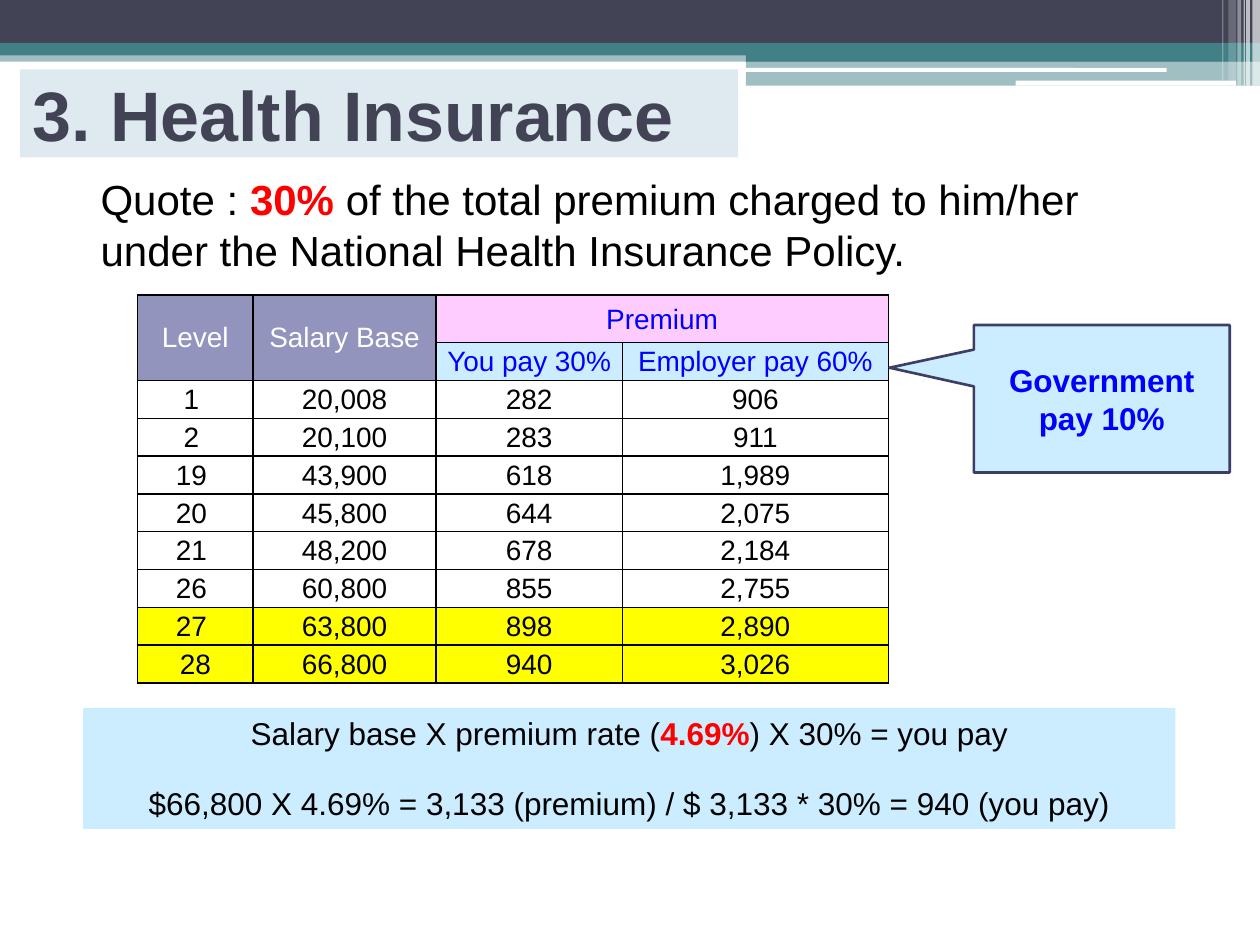
import pptx
import pptx.dml.color
import pptx.enum.shapes
import pptx.enum.text
import pptx.oxml
import pptx.oxml.ns
import pptx.util
from lxml import etree

COLORS = {
    "navy": "424456", "teal": "438086", "white": "FFFFFF", "black": "000000",
    "mist": "DEE9F0", "sky": "CCECFF", "violet": "9394BE", "pink": "FFCCFF",
    "yellow": "FFFF00", "red": "FF0000", "blue": "0000FF", "edge": "3D3E66",
}
SHAPE = pptx.enum.shapes.MSO_SHAPE
ALIGN = pptx.enum.text.PP_ALIGN
MIDDLE = pptx.enum.text.MSO_ANCHOR.MIDDLE
TOP = pptx.enum.text.MSO_ANCHOR.TOP
rgb = pptx.dml.color.RGBColor.from_string

prs = pptx.Presentation()
prs.slide_width = pptx.util.Inches(10)
prs.slide_height = pptx.util.Inches(7.5)
s = prs.slides.add_slide(prs.slide_layouts[6])

# Layout grid: 10 columns by 7.5 rows
COL = prs.slide_width / 10
ROW = prs.slide_height / 7.5


def add_box(x, y, w, h, color, alpha=100, kind=SHAPE.RECTANGLE):
    sp = s.shapes.add_shape(kind, int(x * COL), int(y * ROW), int(w * COL), int(h * ROW))
    sp.shadow.inherit = False
    sp.line.fill.background()
    sp.fill.solid()
    sp.fill.fore_color.rgb = rgb(COLORS[color])
    if alpha < 100:
        clr = sp.fill._xPr.find(".//" + pptx.oxml.ns.qn("a:srgbClr"))
        etree.SubElement(clr, pptx.oxml.ns.qn("a:alpha"), val=str(alpha * 1000))
    return sp


def write(tf, paragraphs, size, align=ALIGN.CENTER, anchor=MIDDLE):
    """Each paragraph is a list of (text, color, bold) runs."""
    tf.word_wrap = True
    tf.vertical_anchor = anchor
    for i, runs in enumerate(paragraphs):
        p = tf.add_paragraph() if i else tf.paragraphs[0]
        p.alignment = align
        for text, color, bold in runs:
            r = p.add_run()
            r.text = text
            r.font.name = "Arial"
            r.font.size = pptx.util.Pt(size)
            r.font.bold = bold
            r.font.color.rgb = rgb(COLORS[color])


# Header bands
for x, y, w, h, color, alpha in [
    (0, 0.4, 10, 0.09, "teal", 50),
    (0, 0, 10, 0.34, "navy", 100),
    (0, 0.34, 10, 0.1, "teal", 100),
    (5.92, 0.39, 4.08, 0.1, "teal", 100),
    (5.92, 0.48, 4.08, 0.2, "teal", 50),
]:
    add_box(x, y, w, h, color, alpha)

# White streaks under the header
for x, y, w, h in [(5.91, 0.54, 3.35, 0.03), (8.06, 0.64, 1.75, 0.04)]:
    add_box(x, y, w, h, "white", kind=SHAPE.ROUNDED_RECTANGLE)

# Translucent stripes at the right edge
for x, w, h, alpha in [
    (9.94, 0.06, 0.68, 65), (9.89, 0.03, 0.68, 65), (9.87, 0.01, 0.68, 60),
    (9.82, 0.03, 0.68, 40), (9.75, 0.06, 0.64, 20), (9.7, 0.01, 0.64, 30),
]:
    add_box(x, 0, w, h, "white", alpha)

# Title
sp = add_box(0.16, 0.55, 5.7, 0.7, "mist")
write(sp.text_frame, [[("3. Health Insurance", "navy", True)]], 40, ALIGN.LEFT)

# Quote
sp = s.shapes.add_textbox(int(0.7 * COL), int(1.33 * ROW), int(8.59 * COL), int(0.91 * ROW))
write(sp.text_frame, [[
    ("Quote : ", "black", False),
    ("30% ", "red", True),
    ("of the total premium charged to him/her under the National Health Insurance Policy.",
     "black", False),
]], 24, ALIGN.LEFT, TOP)

# Premium table
rows = [
    ("Level", "Salary Base", "Premium", ""),
    ("", "", "You pay 30%", "Employer pay 60%"),
    ("1 ", "20,008", "282", "906"),
    ("2 ", "20,100", "283", "911"),
    ("19 ", "43,900", "618", "1,989"),
    ("20 ", "45,800", "644", "2,075"),
    ("21 ", "48,200", "678", "2,184"),
    ("26 ", "60,800", "855", "2,755"),
    ("27 ", "63,800", "898", "2,890"),
    ("28", "66,800", "940", "3,026"),
]
col_widths = [0.92, 1.45, 1.48, 2.11]
row_heights = [0.38] + [0.3] * 9
table = s.shapes.add_table(
    len(rows), len(col_widths), int(1.09 * COL), int(2.34 * ROW),
    int(sum(col_widths) * COL), int(sum(row_heights) * ROW)).table
table.first_row = table.horz_banding = False
for column, width in zip(table.columns, col_widths):
    column.width = int(width * COL)
for row, height in zip(table.rows, row_heights):
    row.height = int(height * ROW)
for first, last in [((0, 0), (1, 0)), ((0, 1), (1, 1)), ((0, 2), (0, 3))]:
    table.cell(*first).merge(table.cell(*last))

for i, values in enumerate(rows):
    for j, text in enumerate(values):
        cell = table.cell(i, j)
        cell.margin_left = cell.margin_right = cell.margin_top = pptx.util.Inches(0.01)
        cell.margin_bottom = 0
        cell.vertical_anchor = MIDDLE
        if i < 2:
            fill = "violet" if j < 2 else ("pink", "sky")[i]
            color = "white" if j < 2 else "blue"
        else:
            fill = "yellow" if i >= 8 else "white"
            color = "black"
        tcPr = cell._tc.get_or_add_tcPr()
        for side in ("lnL", "lnR", "lnT", "lnB"):
            tcPr.append(pptx.oxml.parse_xml(
                f'<a:{side} {pptx.oxml.ns.nsdecls("a")} w="12700"><a:solidFill>'
                f'<a:srgbClr val="{COLORS["black"]}"/></a:solidFill></a:{side}>'))
        cell.fill.solid()
        cell.fill.fore_color.rgb = rgb(COLORS[fill])
        if text:
            write(cell.text_frame, [[(text, color, False)]], 16)

# Worked formula
sp = add_box(0.66, 5.62, 8.67, 0.96, "sky")
write(sp.text_frame, [
    [("Salary base X premium rate (", "black", False),
     ("4.69%", "red", True),
     (") X 30% = you pay", "black", False)],
    [("$66,800 X 4.69% = 3,133 (premium) / $ 3,133 * 30% = 940 (you pay)", "black", False)],
], 18, anchor=TOP)
sp.text_frame.paragraphs[0].space_after = pptx.util.Pt(6)
sp.text_frame.paragraphs[1].space_before = pptx.util.Pt(12)

# Government share callout
sp = add_box(7.73, 2.58, 2.03, 1.17, "sky", kind=SHAPE.RECTANGULAR_CALLOUT)
sp.adjustments[0], sp.adjustments[1] = -0.83, -0.21
sp.line.color.rgb = rgb(COLORS["edge"])
sp.line.width = pptx.util.Pt(1.5)
write(sp.text_frame, [[("Government pay 10%", "blue", True)]], 18)

prs.save("out.pptx")
